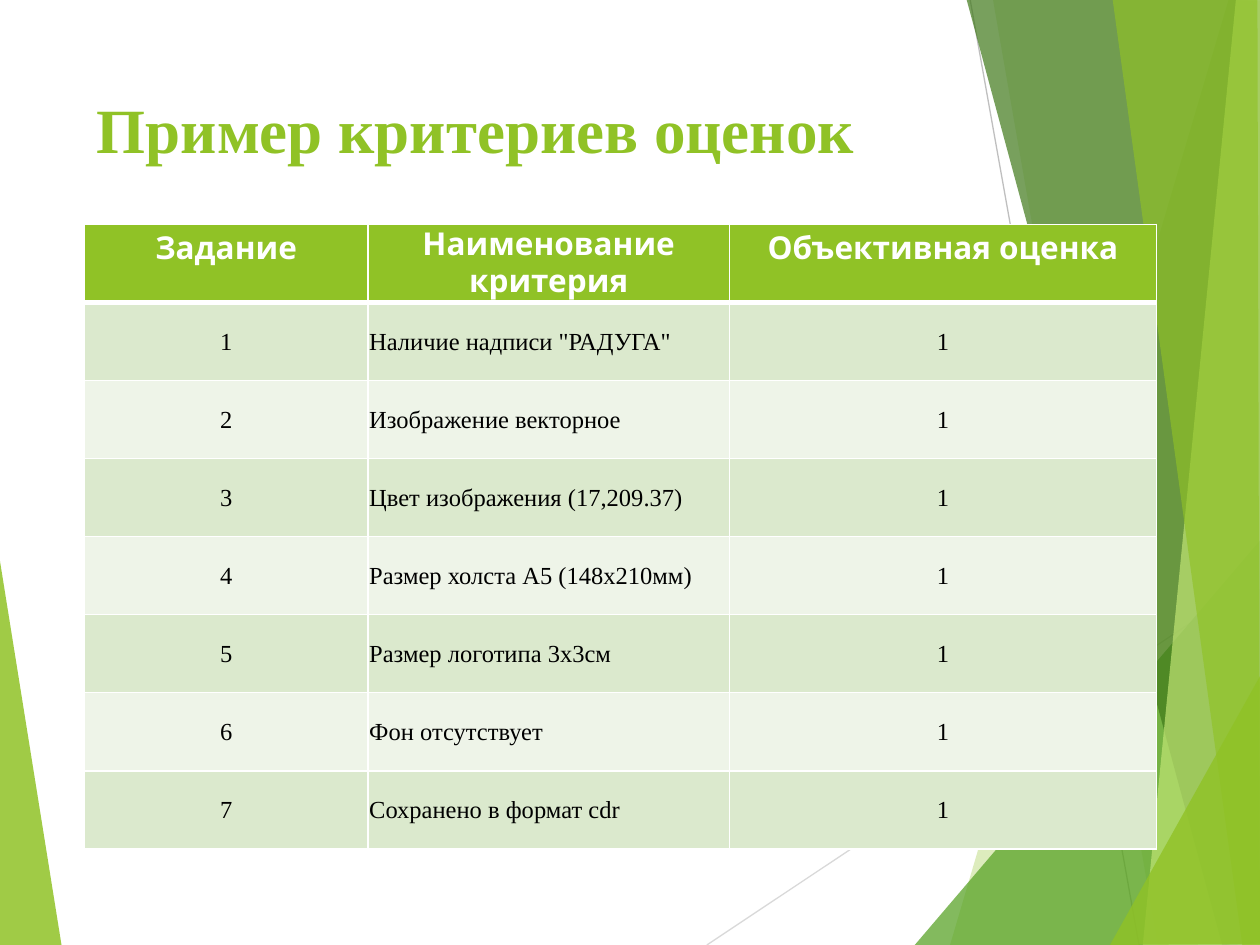
from lxml.etree import SubElement
from pptx import Presentation
from pptx.dml.color import RGBColor
from pptx.enum.shapes import MSO_CONNECTOR
from pptx.enum.text import MSO_ANCHOR, PP_ALIGN
from pptx.oxml.ns import qn
from pptx.util import Inches, Pt

GREEN, WHITE, BLACK = "90C226", "FFFFFF", "000000"
BANDS = ("DBE9CD", "EEF4E8")
SERIF, SANS = "Times New Roman", "Karla"

TITLE_FORMAT = {"name": SERIF, "size": Pt(36), "bold": True}
HEADER_FORMAT = {"name": SANS, "size": Pt(18), "bold": True}
BODY_FORMAT = {"name": SERIF, "size": Pt(14), "bold": False}
TIGHT_CELL = {
    "vertical_anchor": MSO_ANCHOR.MIDDLE,
    "margin_left": Inches(0.01),
    "margin_top": Inches(0.01),
    "margin_right": Inches(0.01),
    "margin_bottom": Inches(0),
}

# Backdrop: colour, opacity in percent, outline in inches
LEFT_SHARD = (GREEN, 85, [(-0.01, 4.39), (0.49, 7.51), (-0.01, 7.5)])
RIGHT_SHARDS = [
    (GREEN, 30, [(9.75, 0), (7.54, 7.5), (10.02, 7.51), (10.01, 0.01)]),
    (GREEN, 20, [(7.88, -0.01), (9.19, 7.5), (10.01, 7.5), (10.01, -0.01)]),
    ("54A021", 72, [(7.26, 7.5), (10, 4.29), (10.01, 7.5)]),
    ("3F7819", 70, [(7.67, -0.01), (9.7, 7.5), (10.01, 7.49), (10.01, -0.01)]),
    ("C0E474", 70, [(9.81, -0.01), (9.07, 7.5), (10.01, 7.5), (10, -0.01)]),
    (GREEN, 65, [(8.83, -0.01), (9.86, 7.5), (10, 7.5), (9.98, -0.01)]),
    (GREEN, 80, [(8.81, 7.5), (10.01, 5.35), (10.01, 7.49)]),
]
RAYS = [
    ("D9D9D9", (5.61, 7.5), (10.01, 4.57)),
    ("BFBFBF", (7.7, 0), (9.04, 7.5)),
]

COLUMN_WIDTHS = (2.25, 2.87, 3.39)
ROW_HEIGHT = 0.62
HEADERS = ("Задание", "Наименование критерия", "Объективная оценка")
CRITERIA = (
    'Наличие надписи "РАДУГА"',
    "Изображение векторное",
    "Цвет изображения (17,209.37)",
    "Размер холста А5 (148х210мм)",
    "Размер логотипа 3х3см",
    "Фон отсутствует",
    "Сохранено в формат cdr",
)
SCORE = "1"


def rgb(color):
    return RGBColor.from_string(color)


def apply_format(target, values):
    for attribute, value in values.items():
        setattr(target, attribute, value)


def write_text(frame, text, color, font_format, align=PP_ALIGN.LEFT):
    paragraph = frame.paragraphs[0]
    paragraph.alignment = align
    run = paragraph.add_run()
    run.text = text
    apply_format(run.font, font_format)
    run.font.color.rgb = rgb(color)


def add_shard(slide, color, opacity, outline):
    points = [(Inches(x), Inches(y)) for x, y in outline]
    builder = slide.shapes.build_freeform(*points[0])
    builder.add_line_segments(points[1:], close=True)
    shard = builder.convert_to_shape()
    shard.shadow.inherit = False
    shard.line.fill.background()
    shard.fill.solid()
    shard.fill.fore_color.rgb = rgb(color)
    fill_color = shard.fill._xPr.find(qn("a:solidFill"))[0]
    SubElement(fill_color, qn("a:alpha"), val=str(opacity * 1000))


def add_ray(slide, color, start, end):
    ray = slide.shapes.add_connector(
        MSO_CONNECTOR.STRAIGHT, *(Inches(value) for value in start + end))
    ray.line.color.rgb = rgb(color)
    ray.line.width = Pt(0.75)
    SubElement(ray._element.spPr, qn("a:effectLst"))


def add_title(slide, text):
    title = slide.shapes.add_textbox(
        Inches(0.67), Inches(0.67), Inches(6.94), Inches(1.44))
    title.text_frame.word_wrap = True
    write_text(title.text_frame, text, GREEN, TITLE_FORMAT)


def style_cell(cell, fill, bottom_width=1):
    properties = cell._tc.get_or_add_tcPr()
    sides = {"lnL": 1, "lnR": 1, "lnT": 1, "lnB": bottom_width}
    for side, width in sides.items():
        border = SubElement(properties, qn(f"a:{side}"), w=str(Pt(width)))
        border_fill = SubElement(border, qn("a:solidFill"))
        SubElement(border_fill, qn("a:srgbClr"), val=WHITE)
    cell.fill.solid()
    cell.fill.fore_color.rgb = rgb(fill)


def add_criteria_table(slide):
    row_count = len(CRITERIA) + 1
    table = slide.shapes.add_table(
        row_count, len(HEADERS), Inches(0.67), Inches(1.78),
        Inches(sum(COLUMN_WIDTHS)), Inches(ROW_HEIGHT * row_count)).table
    for column, width in zip(table.columns, COLUMN_WIDTHS):
        column.width = Inches(width)
    for row in table.rows:
        row.height = Inches(ROW_HEIGHT)

    # Header row: only the middle heading is centred vertically
    for column, heading in enumerate(HEADERS):
        cell = table.cell(0, column)
        style_cell(cell, GREEN, bottom_width=3)
        if column == 1:
            apply_format(cell, TIGHT_CELL)
        write_text(cell.text_frame, heading, WHITE, HEADER_FORMAT, PP_ALIGN.CENTER)

    # Numbered criteria in alternating bands
    for number, criterion in enumerate(CRITERIA, start=1):
        for column, text in enumerate((str(number), criterion, SCORE)):
            cell = table.cell(number, column)
            style_cell(cell, BANDS[(number - 1) % 2])
            apply_format(cell, TIGHT_CELL)
            align = PP_ALIGN.LEFT if column == 1 else PP_ALIGN.CENTER
            write_text(cell.text_frame, text, BLACK, BODY_FORMAT, align)


def main():
    presentation = Presentation()
    presentation.slide_width = Inches(10)
    presentation.slide_height = Inches(7.5)
    slide = presentation.slides.add_slide(presentation.slide_layouts[6])

    # Backdrop
    add_shard(slide, *LEFT_SHARD)
    for ray in RAYS:
        add_ray(slide, *ray)
    for shard in RIGHT_SHARDS:
        add_shard(slide, *shard)

    # Content
    add_title(slide, "Пример критериев оценок")
    add_criteria_table(slide)
    presentation.save("out.pptx")


if __name__ == "__main__":
    main()
